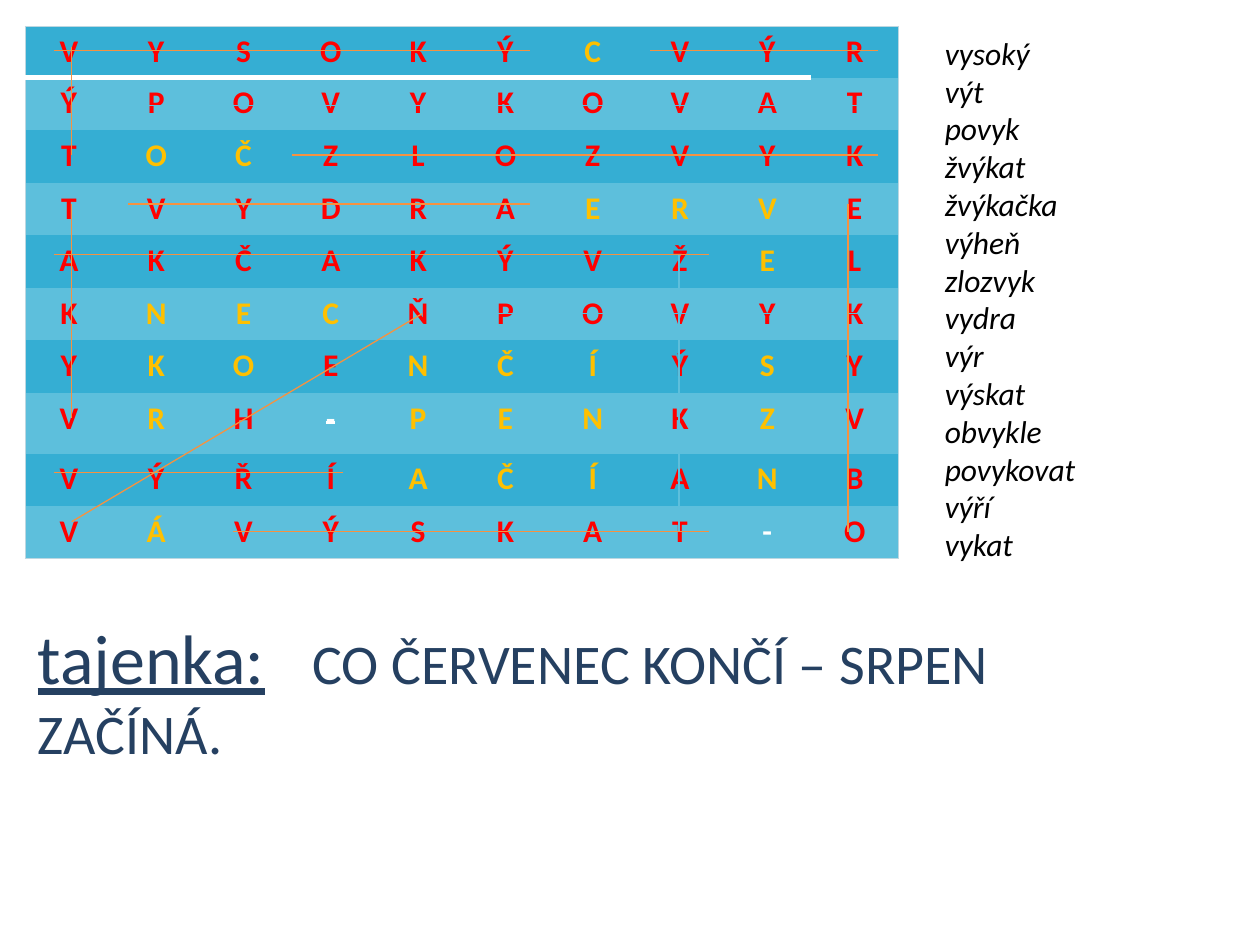
from lxml import etree
from pptx import Presentation
from pptx import util as u
from pptx.dml.color import RGBColor
from pptx.enum import shapes, text
from pptx.oxml.ns import qn

WIDTH, HEIGHT = 10, 7.5
FONT = "Calibri"
RED, GOLD, WHITE, NAVY, ORANGE = "FF0000", "FFC000", "FFFFFF", "254061", "F69240"
DARK, LIGHT, EDGE = "35AED3", "5DBFDC", "BCD7E1"
PLAIN_STYLE = "{2D5ABB26-0587-4C30-8999-92F81FD0307C}"

LETTERS = [
    "VYSOKÝCVÝR", "ÝPOVYKOVAT", "TOČZLOZVYK", "TVYDRAERVE", "AKČAKÝVŽEL",
    "KNECŇPOVYK", "YKOENČÍÝSY", "VRH-PENKZV", "VÝŘÍAČÍANB", "VÁVÝSKAT-O",
]
SOLUTION_COLUMNS = [
    [6], [], [1, 2], [], [8], [1, 2, 3], [1, 2, 4, 5, 6, 8], [1, 4, 5, 6, 8],
    [4, 5, 6, 8], [1],
]
SOLUTION_COLUMNS[3] = [6, 7, 8]
LAST = len(LETTERS) - 1
GRID_LEFT, GRID_TOP, GRID_WIDTH, GRID_HEIGHT = 0.2, 0.21, 6.93, 4.22
FIRST_ROW, TALL_ROW = 0.4, 0.48

WORDS = [
    "vysoký", "výt", "povyk", "žvýkat", "žvýkačka", "výheň", "zlozvyk",
    "vydra", "výr", "výskat", "obvykle", "povykovat", "výří", "vykat",
]
ORANGE_STRIKES = [
    (5.16, 0.4, 6.97, 0.4), (1.85, 4.22, 5.63, 4.22), (2.32, 1.23, 6.97, 1.23),
    (1.02, 1.62, 4.21, 1.62), (0.43, 3.75, 2.72, 3.75), (0.43, 2.02, 5.63, 2.02),
    (0.43, 0.4, 4.21, 0.4), (6.73, 1.62, 6.73, 4.22), (0.57, 4.14, 3.35, 2.49),
    (0.57, 0.37, 0.57, 1.23), (0.57, 1.62, 0.57, 3.32),
]
PALE_STRIKES = [
    (1.02, 0.84, 6.97, 0.84), (3.74, 2.49, 6.81, 2.49), (5.39, 2.02, 5.39, 4.22),
]


def colour(value):
    return RGBColor.from_string(value)


def style_font(font, size, shade):
    font.name = FONT
    font.size = u.Pt(size)
    font.color.rgb = colour(shade)


def add_border(cell, side, shade, points):
    line = etree.Element(qn(f"a:ln{side}"), w=str(u.Pt(points)))
    fill = etree.SubElement(line, qn("a:solidFill"))
    etree.SubElement(fill, qn("a:srgbClr"), val=shade)
    properties = cell._tc.get_or_add_tcPr()
    position = len(properties.findall("*")) - 1
    properties.insert(position, line)


def border_cell(cell, row, column):
    if column == 0:
        add_border(cell, "L", EDGE, 0.75)
    if column == LAST:
        add_border(cell, "R", EDGE, 0.75)
    if row == 0:
        add_border(cell, "T", EDGE, 0.75)
        if column < LAST:
            add_border(cell, "B", WHITE, 3)
    if row == LAST:
        add_border(cell, "B", EDGE, 0.75)


def fill_cell(cell, letter, row, column):
    cell.fill.solid()
    cell.fill.fore_color.rgb = colour(LIGHT if row % 2 else DARK)
    border_cell(cell, row, column)
    para = cell.text_frame.paragraphs[0]
    para.alignment = text.PP_ALIGN.CENTER
    shade = GOLD if column in SOLUTION_COLUMNS[row] else RED
    if letter == "-":
        shade = WHITE
    struck = letter == "-" and row < LAST
    style_font(para.font, 18, shade)
    para.font.bold = not struck
    span = para.add_run()
    span.text = letter
    if struck:
        span.font._element.set("strike", "sngStrike")


def add_letter_grid(page):
    count = len(LETTERS)
    frame = page.shapes.add_table(
        count, count, *map(u.Inches, (GRID_LEFT, GRID_TOP, GRID_WIDTH, GRID_HEIGHT)))
    table = frame.table
    table._tbl.tblPr.find(qn("a:tableStyleId")).text = PLAIN_STYLE
    table.first_row = table.horz_banding = False
    row_height = (GRID_HEIGHT - FIRST_ROW - TALL_ROW) / (count - 2)
    special = {0: FIRST_ROW, 7: TALL_ROW}
    for row, letters in enumerate(LETTERS):
        table.rows[row].height = u.Inches(special.get(row, row_height))
        for column, letter in enumerate(letters):
            fill_cell(table.cell(row, column), letter, row, column)


def add_strike(page, ends, shade):
    line = page.shapes.add_connector(
        shapes.MSO_CONNECTOR.STRAIGHT, *map(u.Inches, ends))
    line.line.color.rgb = colour(shade)
    line.line.width = u.Pt(0.75)
    etree.SubElement(line._element.spPr, qn("a:effectLst"))


def add_box(page, left, top, width, height):
    box = page.shapes.add_textbox(*map(u.Inches, (left, top, width, height)))
    box.text_frame.word_wrap = True
    return box.text_frame


def add_solution(page):
    para = add_box(page, GRID_LEFT, 4.83, 9.21, 1.31).paragraphs[0]
    tabs = etree.SubElement(para._p.get_or_add_pPr(), qn("a:tabLst"))
    etree.SubElement(tabs, qn("a:tab"), pos=str(u.Inches(2.18)), algn="l")
    for words, size in (("tajenka:", 40), ("\tCO ČERVENEC KONČÍ – SRPEN ZAČÍNÁ.", 32)):
        span = para.add_run()
        span.text = words
        style_font(span.font, size, NAVY)
        span.font.underline = size == 40


def add_word_list(page):
    frame = add_box(page, 7.4, 0.22, 2.44, 4.34)
    frame.text = "\n".join(WORDS)
    for para in frame.paragraphs:
        style_font(para.font, 18, "000000")
        para.font.italic = True


def main():
    deck = Presentation()
    deck.slide_width, deck.slide_height = u.Inches(WIDTH), u.Inches(HEIGHT)
    page = deck.slides.add_slide(deck.slide_layouts[6])
    add_letter_grid(page)
    add_solution(page)
    add_word_list(page)
    for strikes, shade in ((PALE_STRIKES, LIGHT), (ORANGE_STRIKES, ORANGE)):
        for ends in strikes:
            add_strike(page, ends, shade)
    deck.save("out.pptx")


if __name__ == "__main__":
    main()
